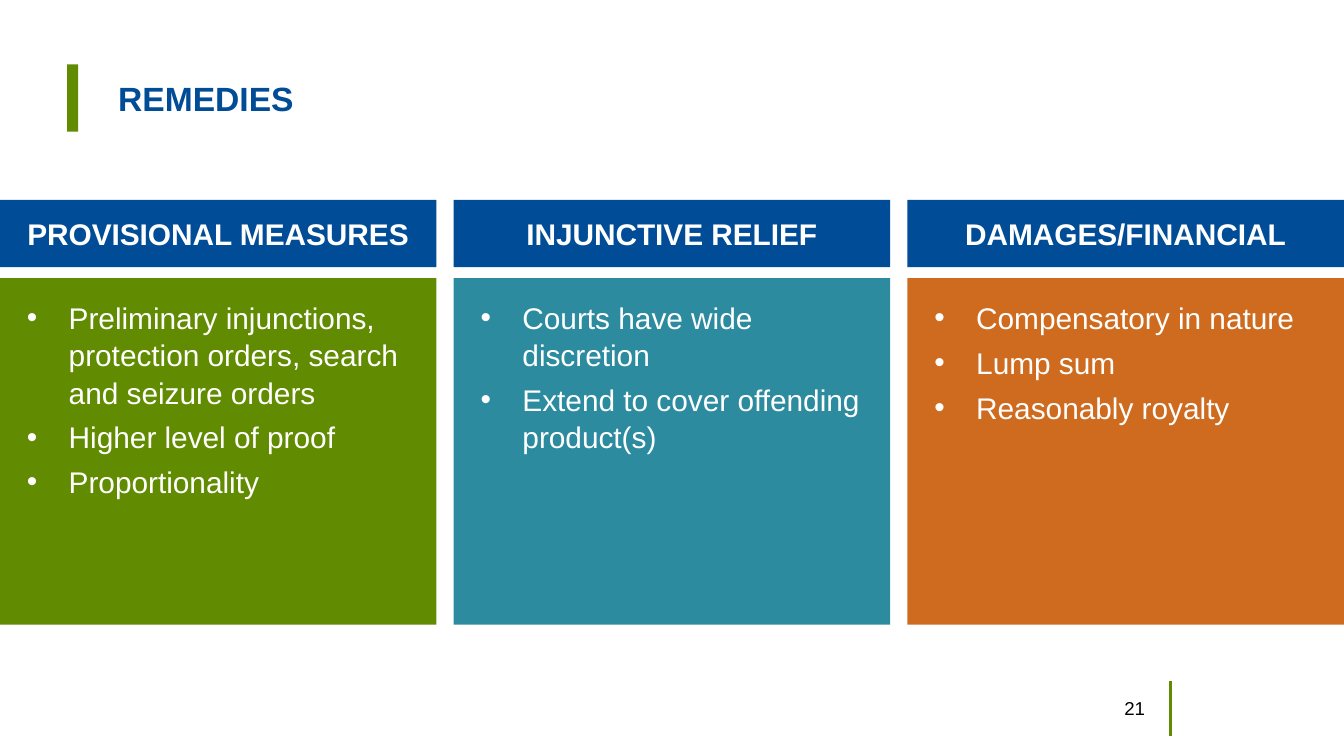
from dataclasses import dataclass

from lxml.etree import SubElement
from pptx import Presentation
from pptx.dml.color import RGBColor
from pptx.enum.shapes import MSO_CONNECTOR, MSO_SHAPE
from pptx.enum.text import MSO_ANCHOR as Anchor, MSO_AUTO_SIZE, PP_ALIGN as Align
from pptx.oxml.ns import qn
from pptx.util import Cm, Pt

COLORS = {
    "blue": "004C97",
    "green": "618B00",
    "teal": "2C8B9F",
    "orange": "CF6B1F",
    "white": "FFFFFF",
    "black": "000000",
}
SLIDE_W, SLIDE_H = 25.4, 14.29
COLUMN_W = 8.25
HEADER_TOP, HEADER_H = 3.78, 1.27
BODY_TOP, BODY_H = 5.26, 6.55
INDENT = 0.79


@dataclass
class Column:
    heading: str
    color: str
    points: list[str]


COLUMNS = [
    Column("PROVISIONAL MEASURES", "green", [
        "Preliminary injunctions, protection orders, search and seizure orders",
        "Higher level of proof",
        "Proportionality",
    ]),
    Column("INJUNCTIVE RELIEF", "teal", [
        "Courts have wide discretion",
        "Extend to cover offending product(s)",
    ]),
    Column("DAMAGES/FINANCIAL", "orange", [
        "Compensatory in nature",
        "Lump sum",
        "Reasonably royalty",
    ]),
]


def rgb(name: str) -> RGBColor:
    return RGBColor.from_string(COLORS[name])


def add_bullet(p) -> None:
    pPr = p._p.get_or_add_pPr()
    pPr.set("marL", str(Cm(INDENT)))
    pPr.set("indent", str(-Cm(INDENT)))
    color = SubElement(pPr, qn("a:buClr"))
    SubElement(color, qn("a:srgbClr"), val=COLORS["white"])
    SubElement(pPr, qn("a:buFont"), typeface="Arial")
    SubElement(pPr, qn("a:buChar"), char="•")


def write(s, *lines: str, size: float = 16, color: str = "white", bold: bool = False,
          align=Align.LEFT, anchor=Anchor.MIDDLE, bullet: bool = False,
          spacing: float = 1.0, after: float = 0) -> None:
    tf = s.text_frame
    tf.word_wrap = True
    tf.auto_size = MSO_AUTO_SIZE.NONE
    tf.vertical_anchor = anchor
    for i, line in enumerate(lines):
        p = tf.paragraphs[0] if i == 0 else tf.add_paragraph()
        if bullet:
            add_bullet(p)
        p.alignment = align
        p.line_spacing = spacing
        p.space_before = Pt(0)
        p.space_after = Pt(after)
        r = p.add_run()
        r.text = line
        r.font.name = "Arial"
        r.font.size = Pt(size)
        r.font.bold = bold
        r.font.color.rgb = rgb(color)


def add_block(slide, x: float, y: float, w: float, h: float, color: str):
    s = slide.shapes.add_shape(MSO_SHAPE.RECTANGLE, Cm(x), Cm(y), Cm(w), Cm(h))
    s.shadow.inherit = False
    s.fill.solid()
    s.fill.fore_color.rgb = rgb(color)
    s.line.fill.background()
    return s


def add_column(slide, x: float, column: Column) -> None:
    header = add_block(slide, x, HEADER_TOP, COLUMN_W, HEADER_H, "blue")
    write(header, column.heading, bold=True, align=Align.CENTER)
    body = add_block(slide, x, BODY_TOP, COLUMN_W, BODY_H, column.color)
    tf = body.text_frame
    tf.margin_left, tf.margin_top = Cm(0.51), Cm(0.38)
    tf.margin_right = tf.margin_bottom = Cm(0.25)
    write(body, *column.points, anchor=Anchor.TOP, bullet=True, spacing=1.04, after=4)


def add_title(slide, text: str) -> None:
    add_block(slide, 1.27, 1.22, 0.21, 1.27, "green")
    s = slide.shapes.title
    s.left, s.top, s.width, s.height = Cm(1.98), Cm(1.04), Cm(20.6), Cm(1.73)
    write(s, text, size=18, color="blue", bold=True, spacing=0.9)


def add_page_number(slide, number: str) -> None:
    s = slide.shapes.add_textbox(Cm(20.19), Cm(13), Cm(1.7), Cm(0.76))
    write(s, number, size=10, color="black", align=Align.RIGHT)
    rule = slide.shapes.add_connector(
        MSO_CONNECTOR.STRAIGHT, Cm(22.12), Cm(12.88), Cm(22.12), Cm(13.92))
    rule.line.color.rgb = rgb("green")
    rule.line.width = Pt(1.5)
    SubElement(rule._element.spPr, qn("a:effectLst"))


def main() -> None:
    prs = Presentation()
    prs.slide_width, prs.slide_height = Cm(SLIDE_W), Cm(SLIDE_H)
    slide = prs.slides.add_slide(prs.slide_layouts[5])
    add_title(slide, "REMEDIES")
    pitch = (SLIDE_W - COLUMN_W) / (len(COLUMNS) - 1)
    for i, column in enumerate(COLUMNS):
        add_column(slide, i * pitch, column)
    add_page_number(slide, "21")
    prs.save("out.pptx")


if __name__ == "__main__":
    main()
